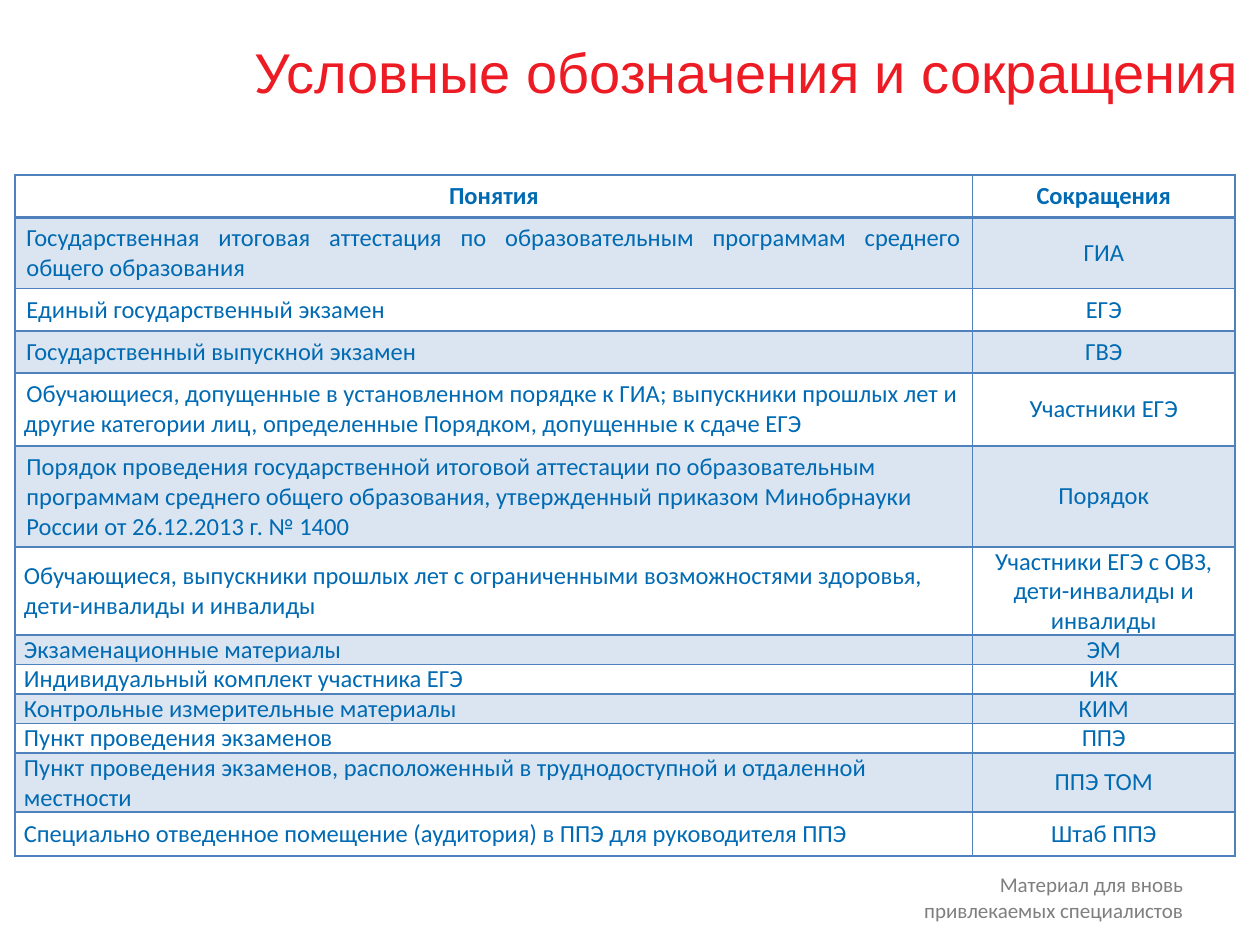
from lxml.etree import SubElement
from pptx import Presentation
from pptx.dml.color import RGBColor
from pptx.enum.text import MSO_ANCHOR as Anchor, PP_ALIGN as Align
from pptx.oxml.ns import qn
from pptx.util import Inches, Pt

BLUE = "4F81BD"
TEXT_BLUE = "006AB3"
WIDE = (0.09, 0.05)
NARROW = (0.07, 0)
COLUMNS = (7.6, 2.08)
ROWS = [
    (0.33, WIDE, "Понятия", "Сокращения"),
    (0.56, WIDE, "Государственная итоговая аттестация по образовательным программам "
     "среднего общего образования", "ГИА"),
    (0.33, WIDE, "Единый государственный экзамен", "ЕГЭ"),
    (0.33, WIDE, "Государственный выпускной экзамен", "ГВЭ"),
    (0.58, NARROW, "Обучающиеся, допущенные в установленном порядке к ГИА; выпускники "
     "прошлых лет и другие категории лиц, определенные Порядком, допущенные к сдаче ЕГЭ",
     "Участники ЕГЭ"),
    (0.79, WIDE, "Порядок проведения государственной итоговой аттестации по образовательным "
     "программам среднего общего образования, утвержденный приказом Минобрнауки России "
     "от 26.12.2013 г. № 1400", "Порядок"),
    (0.7, NARROW, "Обучающиеся, выпускники прошлых лет с ограниченными возможностями "
     "здоровья, дети-инвалиды и инвалиды", "Участники ЕГЭ с ОВЗ, дети-инвалиды и инвалиды"),
    (0.23, NARROW, "Экзаменационные материалы", "ЭМ"),
    (0.23, NARROW, "Индивидуальный комплект участника ЕГЭ", "ИК"),
    (0.23, NARROW, "Контрольные измерительные материалы", "КИМ"),
    (0.23, NARROW, "Пункт проведения экзаменов", "ППЭ"),
    (0.46, NARROW, "Пункт проведения экзаменов, расположенный в труднодоступной "
     "и отдаленной местности", "ППЭ ТОМ"),
    (0.35, NARROW, "Специально отведенное помещение (аудитория) в ППЭ для руководителя ППЭ",
     "Штаб ППЭ"),
]
JUSTIFIED_ROW = 1
INDENTED_ROW = 4


def color(value):
    return RGBColor.from_string(value)


def style_paragraph(paragraph, font_name, size, font_color, align, bold=False):
    paragraph.alignment = align
    font = paragraph.font
    font.name = font_name
    font.size = Pt(size)
    font.bold = bold
    font.color.rgb = color(font_color)


def add_text(slide, box, text, font_name, size, font_color, align, anchor):
    shape = slide.shapes.add_textbox(*map(Inches, box))
    frame = shape.text_frame
    frame.word_wrap = True
    frame.vertical_anchor = anchor
    frame.text = text
    style_paragraph(frame.paragraphs[0], font_name, size, font_color, align)


def add_borders(cell, top, bottom):
    properties = cell._tc.get_or_add_tcPr()
    for side, width in (("L", 1), ("R", 1), ("T", top), ("B", bottom)):
        line = SubElement(properties, qn(f"a:ln{side}"), w=str(Pt(width)))
        fill = SubElement(line, qn("a:solidFill"))
        SubElement(fill, qn("a:srgbClr"), val=BLUE)


def fill_cell(cell, shaded):
    if not shaded:
        cell.fill.background()
        return
    cell.fill.solid()
    cell.fill.fore_color.rgb = color(BLUE)
    fill_color = cell._tc.tcPr.find(qn("a:solidFill")).find(qn("a:srgbClr"))
    SubElement(fill_color, qn("a:alpha"), val="20000")


def cell_align(row, column):
    if row == 0 or column == 1:
        return Align.CENTER
    return Align.JUSTIFY if row == JUSTIFIED_ROW else Align.LEFT


def add_terms_table(slide, box):
    shape = slide.shapes.add_table(len(ROWS), len(COLUMNS), *map(Inches, box))
    table = shape.table
    table.first_row = table.horz_banding = False
    for column, width in enumerate(COLUMNS):
        table.columns[column].width = Inches(width)
    for row, (height, (side, edge), *texts) in enumerate(ROWS):
        table.rows[row].height = Inches(height)
        for column, text in enumerate(texts):
            cell = table.cell(row, column)
            cell.margin_left = cell.margin_right = Inches(side)
            cell.margin_top = cell.margin_bottom = Inches(edge)
            cell.vertical_anchor = Anchor.MIDDLE
            cell.text = text
            paragraph = cell.text_frame.paragraphs[0]
            style_paragraph(paragraph, "Calibri", 14, TEXT_BLUE,
                            cell_align(row, column), bold=row == 0)
            if row == INDENTED_ROW and column == 0:
                paragraph._p.get_or_add_pPr().set("indent", str(Inches(0.02)))
            add_borders(cell, 2 if row == 1 else 1, 2 if row == 0 else 1)
            fill_cell(cell, row % 2 == 1)


def main():
    presentation = Presentation()
    presentation.slide_width = Inches(10)
    presentation.slide_height = Inches(7.5)
    slide = presentation.slides.add_slide(presentation.slide_layouts[6])
    add_text(slide, (6.97, 6.87, 2.52, 0.51), "Материал для вновь привлекаемых специалистов",
             "Calibri", 12, "7F7F7F", Align.RIGHT, Anchor.TOP)
    add_text(slide, (1.89, -0.02, 8.07, 1.17), "Условные обозначения и сокращения",
             "Arial", 32, "ED1C24", Align.CENTER, Anchor.MIDDLE)
    add_terms_table(slide, (0.12, 1.39, sum(COLUMNS), sum(row[0] for row in ROWS)))
    presentation.save("out.pptx")


if __name__ == "__main__":
    main()
